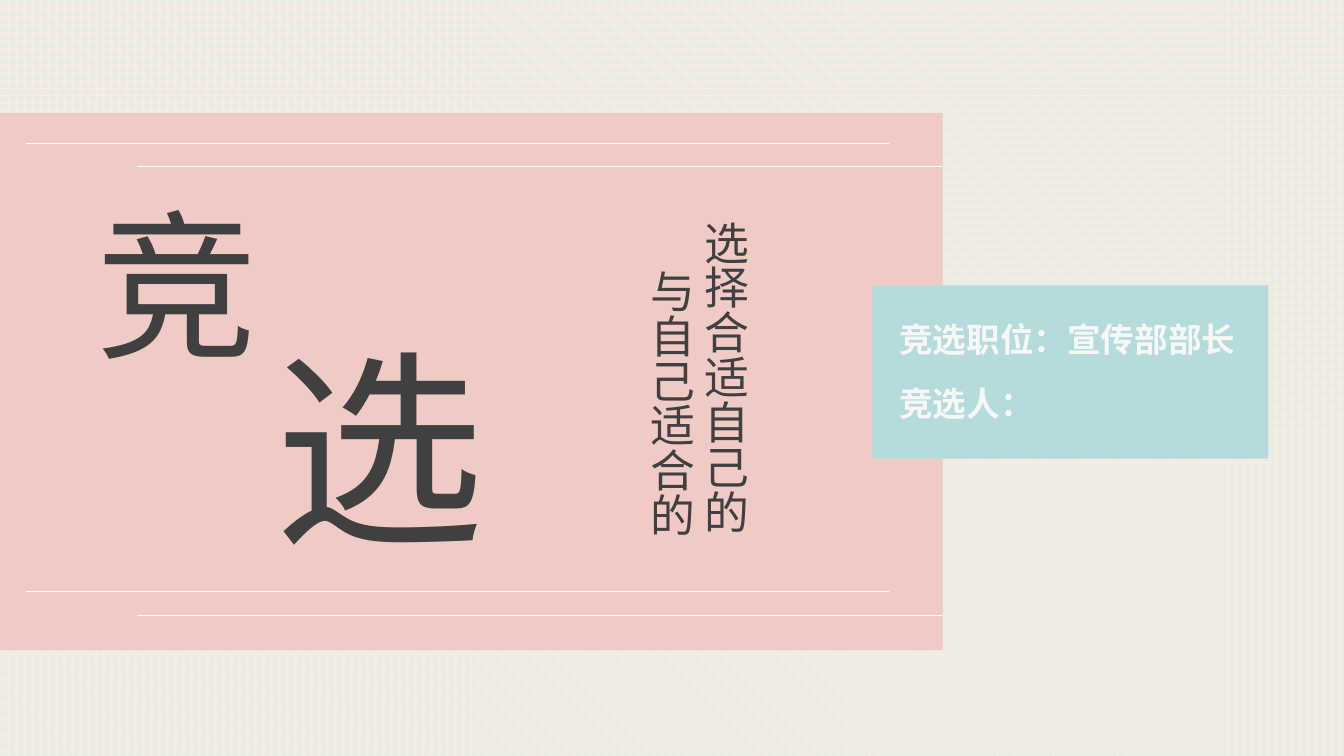
from pptx import Presentation
from pptx.dml.color import RGBColor
from pptx.enum import dml, lang, shapes, text
from pptx.oxml import ns
from pptx.util import Inches, Pt
from lxml import etree

CREAM = RGBColor(0xFE, 0xEB, 0xE4)
SAGE = RGBColor(0xEA, 0xED, 0xE4)
PINK = RGBColor(0xF0, 0xCB, 0xC5)
AQUA = RGBColor(0xB5, 0xDB, 0xDC)
CHARCOAL = RGBColor(0x40, 0x40, 0x40)
OFF_WHITE = RGBColor(0xF7, 0xF7, 0xF7)
WHITE = RGBColor(0xFF, 0xFF, 0xFF)
FONT = "Arial"


def set_plaid_background(slide):
    fill = slide.background.fill
    fill.patterned()
    fill.pattern = dml.MSO_PATTERN.PLAID
    fill.fore_color.rgb = CREAM
    fill.back_color.rgb = SAGE


def add_panel(slide, left, top, width, height, color):
    panel = slide.shapes.add_shape(
        shapes.MSO_SHAPE.RECTANGLE,
        Inches(left), Inches(top), Inches(width), Inches(height))
    panel.shadow.inherit = False
    panel.fill.solid()
    panel.fill.fore_color.rgb = color
    panel.line.fill.background()


def add_rule(slide, left, right, top):
    rule = slide.shapes.add_connector(
        shapes.MSO_CONNECTOR.STRAIGHT,
        Inches(left), Inches(top), Inches(right), Inches(top))
    rule.line.color.rgb = WHITE
    rule.line.width = Pt(0.5)
    etree.SubElement(rule._element.spPr, ns.qn("a:effectLst"))


def add_text(slide, left, top, width, height, lines, size, color, bold=False):
    box = slide.shapes.add_textbox(
        Inches(left), Inches(top), Inches(width), Inches(height))
    frame = box.text_frame
    frame.word_wrap = True
    frame.auto_size = text.MSO_AUTO_SIZE.SHAPE_TO_FIT_TEXT
    for index, line in enumerate(lines):
        paragraph = frame.add_paragraph() if index else frame.paragraphs[0]
        run = paragraph.add_run()
        run.text = line
        font = run.font
        font.name = FONT
        font.size = Pt(size)
        font.bold = bold
        font.color.rgb = color
        font.language_id = lang.MSO_LANGUAGE_ID.SIMPLIFIED_CHINESE
        latin = run._r.rPr.find(ns.qn("a:latin"))
        east_asian = etree.Element(ns.qn("a:ea"), typeface=FONT)
        latin.addnext(east_asian)
    return frame


def add_vertical_motto(slide):
    frame = add_text(slide, 6.23, 2.09, 1.28, 4.1,
                     ["选择合适自己的", "与自己适合的"], 32, CHARCOAL)
    frame._txBody.bodyPr.set("vert", "eaVert")
    second_column = frame.paragraphs[1]._p.get_or_add_pPr()
    second_column.set("marL", str(Inches(0.48)))
    second_column.set("indent", "0")


def main():
    presentation = Presentation()
    presentation.slide_width = Inches(13.33)
    presentation.slide_height = Inches(7.5)
    slide = presentation.slides.add_slide(presentation.slide_layouts[6])
    set_plaid_background(slide)

    add_panel(slide, -0.01, 1.12, 9.36, 5.33, PINK)
    add_text(slide, 2.62, 3.11, 1.86, 2.62, ["选"], 150, CHARCOAL)
    add_text(slide, 0.86, 1.79, 1.3, 2.04, ["竞"], 115, CHARCOAL)
    add_vertical_motto(slide)

    add_panel(slide, 8.65, 2.83, 3.93, 1.72, AQUA)
    add_text(slide, 8.82, 3.11, 3.66, 0.5, ["竞选职位：宣传部部长"], 24, OFF_WHITE, bold=True)
    add_text(slide, 8.82, 3.75, 1.6, 0.5, ["竞选人："], 24, OFF_WHITE, bold=True)

    for top in (1.42, 5.87):
        add_rule(slide, 0.26, 8.82, top)
        add_rule(slide, 1.36, 9.34, top + 0.23)

    presentation.save("out.pptx")


if __name__ == "__main__":
    main()
